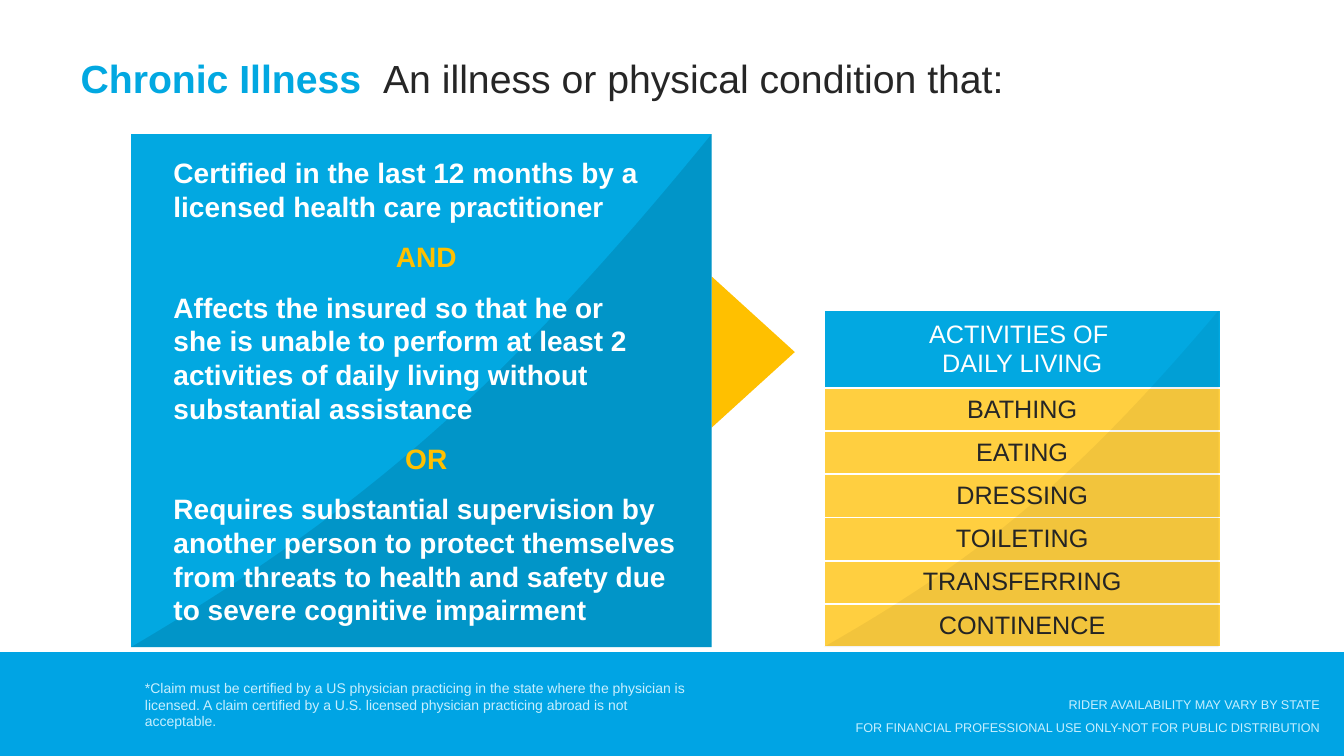
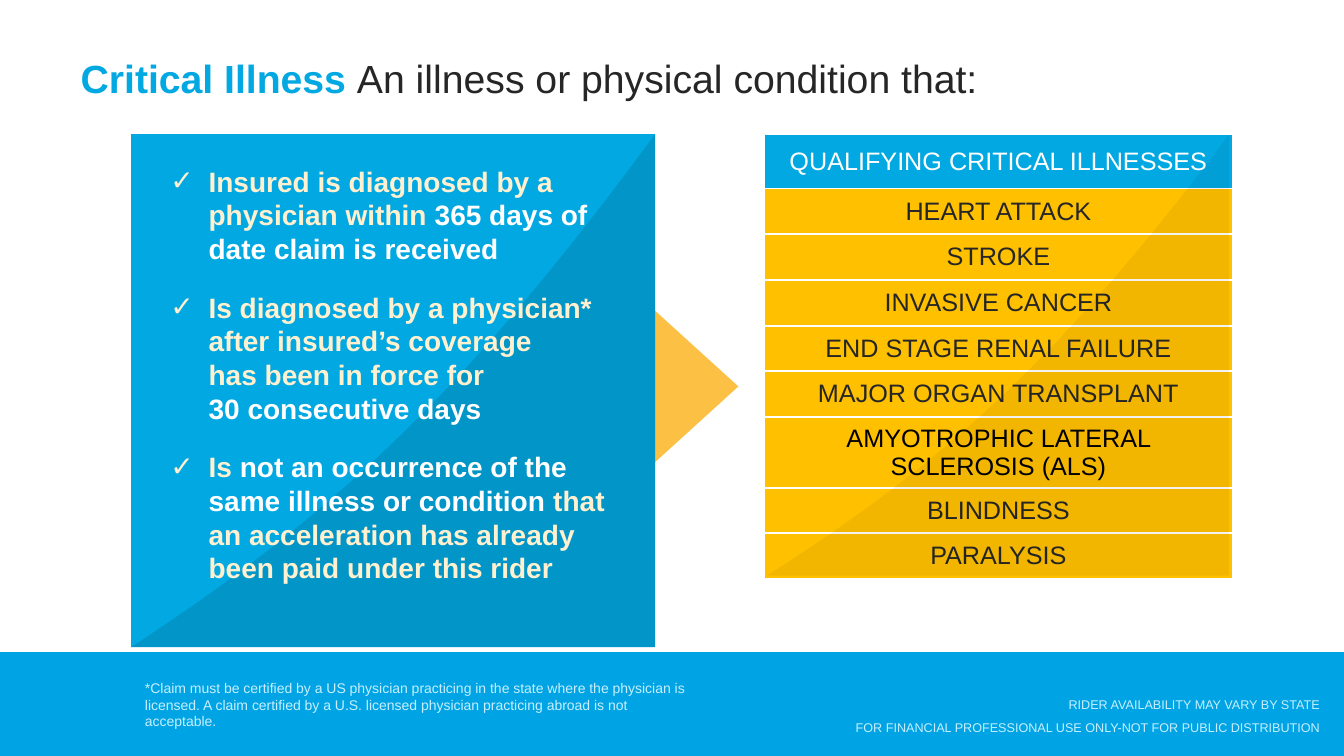
from typing import NamedTuple

from pptx import Presentation
from pptx.dml.color import RGBColor
from pptx.enum.shapes import MSO_SHAPE
from pptx.enum.text import MSO_ANCHOR, PP_ALIGN
from pptx.oxml.ns import qn
from pptx.oxml.xmlchemy import OxmlElement
from pptx.util import Inches, Pt

RECTANGLE, TRIANGLE = MSO_SHAPE.RECTANGLE, MSO_SHAPE.ISOSCELES_TRIANGLE
LEFT, CENTER, RIGHT = PP_ALIGN.LEFT, PP_ALIGN.CENTER, PP_ALIGN.RIGHT
TOP, MIDDLE, BOTTOM = MSO_ANCHOR.TOP, MSO_ANCHOR.MIDDLE, MSO_ANCHOR.BOTTOM

BAND_BLUE = RGBColor(0x00, 0xA4, 0xE4)
BLUE = RGBColor(0x02, 0xA8, 0xE1)
PALE_BLUE = RGBColor(0xC7, 0xEF, 0xFF)
GOLD = RGBColor(0xFF, 0xC0, 0x00)
SOFT_GOLD = RGBColor(0xFC, 0xC1, 0x44)
CREAM = RGBColor(0xFF, 0xF1, 0xD0)
INK = RGBColor(0x26, 0x26, 0x26)
BLACK = RGBColor(0x00, 0x00, 0x00)
WHITE = RGBColor(0xFF, 0xFF, 0xFF)

FONT = "Arial"
SLIDE_WIDTH, SLIDE_HEIGHT = Inches(13.33), Inches(7.5)


class Box(NamedTuple):
    left: int
    top: int
    width: int
    height: int

    def share(self, left, top, width, height):
        """A box inside this one, given in percent of it."""
        return Box(int(self.left + self.width * left / 100),
                   int(self.top + self.height * top / 100),
                   int(self.width * width / 100),
                   int(self.height * height / 100))


SLIDE = Box(0, 0, SLIDE_WIDTH, SLIDE_HEIGHT)

# Regions, in percent of the slide
TITLE = SLIDE.share(6, 6.67, 88, 6.8)
BAND = SLIDE.share(0, 86.25, 100, 13.75)
RIDER = SLIDE.share(48.15, 91.2, 50.03, 5.73)
NOTE = SLIDE.share(10.05, 89.2, 42.08, 8.13)
POINTER_LENGTH, POINTER_SPAN = SLIDE_HEIGHT * 0.11, SLIDE_HEIGHT * 0.2

RIDER_LINES = ["RIDER AVAILABILITY MAY VARY BY STATE",
               "FOR FINANCIAL PROFESSIONAL USE ONLY-NOT FOR PUBLIC DISTRIBUTION"]
NOTE_TEXT = ("*Claim must be certified by a US physician practicing in the state "
             "where the physician is licensed. A claim certified by a U.S. licensed "
             "physician practicing abroad is not acceptable.")


def child(parent, tag, **attributes):
    element = OxmlElement(tag)
    for name, value in attributes.items():
        element.set(name, str(value))
    parent.append(element)
    return element


def paint(fill, color, opacity=100):
    fill.solid()
    fill.fore_color.rgb = color
    if opacity < 100:
        solid = fill._xPr.find(qn("a:solidFill"))
        child(solid[0], "a:alpha", val=opacity * 1000)


def finish(shape, color, opacity=100):
    shape.shadow.inherit = False
    shape.line.fill.background()
    paint(shape.fill, color, opacity)


def style(span, size, color, bold=False):
    span.font.name, span.font.size = FONT, Pt(size)
    span.font.color.rgb, span.font.bold = color, bold


def write(para, spans, size, bold=False, align=LEFT):
    """Spans are (text, color) pairs; a newline breaks the line."""
    para.alignment = align
    for text, color in spans:
        for index, line in enumerate(text.split("\n")):
            if index:
                para.add_line_break()
            if line:
                span = para.add_run()
                span.text = line
                style(span, size, color, bold)


def add_text(page, box, anchor=TOP, inset=True, wrap=True):
    frame = page.shapes.add_textbox(*box).text_frame
    frame.word_wrap, frame.vertical_anchor = wrap, anchor
    if not inset:
        frame.margin_left = frame.margin_right = 0
        frame.margin_top = frame.margin_bottom = 0
    return frame


def paragraphs(frame, count):
    return [frame.paragraphs[0]] + [frame.add_paragraph() for _ in range(count - 1)]


def add_shape(page, kind, box, color):
    shape = page.shapes.add_shape(kind, *box)
    finish(shape, color)
    return shape


def add_shade(page, box, opacity):
    """Dark lower right corner, bounded by a curve from corner to corner."""
    corners = [(39, 74), (64, 50), (100, 0), (100, 100)]
    points = [box.share(x, y, 0, 0)[:2] for x, y in corners]
    builder = page.shapes.build_freeform(box.left, box.top + box.height)
    builder.add_line_segments(points, close=True)
    shade = builder.convert_to_shape()
    # The first three points become one Bézier segment
    segments = shade._element.findall(".//" + qn("a:lnTo"))[:3]
    curve = OxmlElement("a:cubicBezTo")
    segments[0].addprevious(curve)
    for segment in segments:
        curve.append(segment[0])
        segment.getparent().remove(segment)
    finish(shade, BLACK, opacity)


def add_frame(page):
    """Band at the foot with the rider lines and the claim note."""
    add_shape(page, RECTANGLE, BAND, BAND_BLUE)
    rider = add_text(page, RIDER, inset=False)
    for para, line in zip(paragraphs(rider, len(RIDER_LINES)), RIDER_LINES):
        write(para, [(line, PALE_BLUE)], 9, align=RIGHT)
        para.line_spacing = 1.5
    note = add_text(page, NOTE)
    write(note.paragraphs[0], [(NOTE_TEXT, PALE_BLUE)], 10)


def add_title(page, term, tab=None):
    """Bold term and plain phrase, apart by a space or a tab stop (inches)."""
    para = add_text(page, TITLE, BOTTOM, inset=False, wrap=False).paragraphs[0]
    if tab:
        stops = child(para._p.get_or_add_pPr(), "a:tabLst")
        child(stops, "a:tab", pos=Inches(tab), algn="l")
    gap = "\t" if tab else " "
    write(para, [(term + gap, BLUE)], 28, bold=True)
    write(para, [("An illness or physical condition that:", INK)], 28)


def add_panel(page, box, pointer_at, pointer_color):
    """Blue panel whose pointer is centred at a percentage of its height."""
    _, middle, *_ = box.share(0, pointer_at, 0, 0)
    center = box.left + box.width + POINTER_LENGTH / 2
    pointer_box = (int(center - POINTER_SPAN / 2), int(middle - POINTER_LENGTH / 2),
                   int(POINTER_SPAN), int(POINTER_LENGTH))
    add_shape(page, TRIANGLE, pointer_box, pointer_color).rotation = 90
    add_shape(page, RECTANGLE, box, BLUE)
    add_shade(page, box, 11)


def add_conditions(page, box, conditions, space_after, bullet=None):
    """Each condition is (alignment, spans)."""
    frame = add_text(page, box)
    for para, (align, spans) in zip(paragraphs(frame, len(conditions)), conditions):
        if bullet:
            properties = para._p.get_or_add_pPr()
            properties.set("marL", str(Inches(0.38)))
            properties.set("indent", str(-Inches(0.38)))
            child(properties, "a:buFont", typeface=FONT)
            child(properties, "a:buChar", char=bullet)
        write(para, spans, 20, bold=True, align=align)
        para.space_after = Pt(space_after)


def add_border(cell):
    properties = cell._tc.get_or_add_tcPr()
    for side in ("a:lnL", "a:lnR", "a:lnT", "a:lnB"):
        line = child(properties, side, w=Pt(1.5))
        child(child(line, "a:solidFill"), "a:srgbClr", val=WHITE)


def add_list_table(page, box, header, header_height, items, opacity=100, black=()):
    """One column: a blue header, then gold rows sharing the rest."""
    table = page.shapes.add_table(len(items) + 1, 1, *box).table
    table.first_row = table.horz_banding = False
    row_height = int((box.height - header_height) / len(items))
    for index, text in enumerate([header] + items):
        is_header = index == 0
        table.rows[index].height = header_height if is_header else row_height
        cell = table.cell(index, 0)
        cell.vertical_anchor = MIDDLE
        add_border(cell)
        if is_header:
            paint(cell.fill, BLUE)
            color = WHITE
        else:
            paint(cell.fill, GOLD, opacity)
            color = BLACK if text in black else INK
        write(cell.text_frame.paragraphs[0], [(text, color)], 18, align=CENTER)


def build_chronic(page):
    add_frame(page)
    add_title(page, "Chronic Illness", tab=3)
    add_list_table(page, SLIDE.share(61.28, 41.07, 29.55, 44.53),
                   "ACTIVITIES OF \nDAILY LIVING", Inches(0.77),
                   ["BATHING", "EATING", "DRESSING", "TOILETING",
                    "TRANSFERRING", "CONTINENCE"], opacity=75)
    panel = SLIDE.share(9.75, 17.73, 43.2, 67.87)
    add_panel(page, panel, 42.5, GOLD)
    add_conditions(page, panel.share(5.6, 3.3, 90.5, 94.5), [
        (LEFT, [("Certified in the last 12 months by a licensed health care "
                 "practitioner", WHITE)]),
        (CENTER, [("AND", GOLD)]),
        (LEFT, [("Affects the insured so that he or \nshe is unable to perform at "
                 "least 2 activities of daily living without substantial "
                 "assistance", WHITE)]),
        (CENTER, [("OR", GOLD)]),
        (LEFT, [("Requires substantial supervision by another person to protect "
                 "themselves from threats to health and safety due to severe "
                 "cognitive impairment", WHITE)]),
    ], space_after=12)
    add_shade(page, SLIDE.share(61.28, 41.07, 29.4, 44.53), 5)


def build_critical(page):
    add_frame(page)
    add_title(page, "Critical Illness")
    sclerosis = "AMYOTROPHIC LATERAL SCLEROSIS (ALS)"
    add_list_table(page, SLIDE.share(56.85, 17.73, 34.88, 55.6),
                   "QUALIFYING CRITICAL ILLNESSES", Inches(0.54),
                   ["HEART ATTACK", "STROKE", "INVASIVE CANCER",
                    "END STAGE RENAL FAILURE", "MAJOR ORGAN TRANSPLANT",
                    sclerosis, "BLINDNESS", "PARALYSIS"], black=(sclerosis,))
    panel = SLIDE.share(9.75, 17.73, 39, 67.87)
    add_panel(page, panel, 49.2, SOFT_GOLD)
    add_conditions(page, panel.share(5.6, 4.9, 90.5, 84.7), [
        (LEFT, [("Insured is diagnosed by a physician within ", CREAM),
                ("365 days of date claim is received", WHITE)]),
        (LEFT, [("Is diagnosed by a physician* after insured’s coverage \n"
                 "has been in force for \n", CREAM),
                ("30 consecutive days", WHITE)]),
        (LEFT, [("Is ", CREAM),
                ("not an occurrence of the same illness or condition ", WHITE),
                ("that an acceleration has already been paid under this rider",
                 CREAM)]),
    ], space_after=18, bullet="✓")
    add_shade(page, SLIDE.share(57.08, 17.87, 34.35, 58.27), 5)


def main():
    deck = Presentation()
    deck.slide_width, deck.slide_height = SLIDE_WIDTH, SLIDE_HEIGHT
    blank = deck.slide_layouts[6]
    for build in (build_chronic, build_critical):
        build(deck.slides.add_slide(blank))
    deck.save("out.pptx")


if __name__ == "__main__":
    main()
